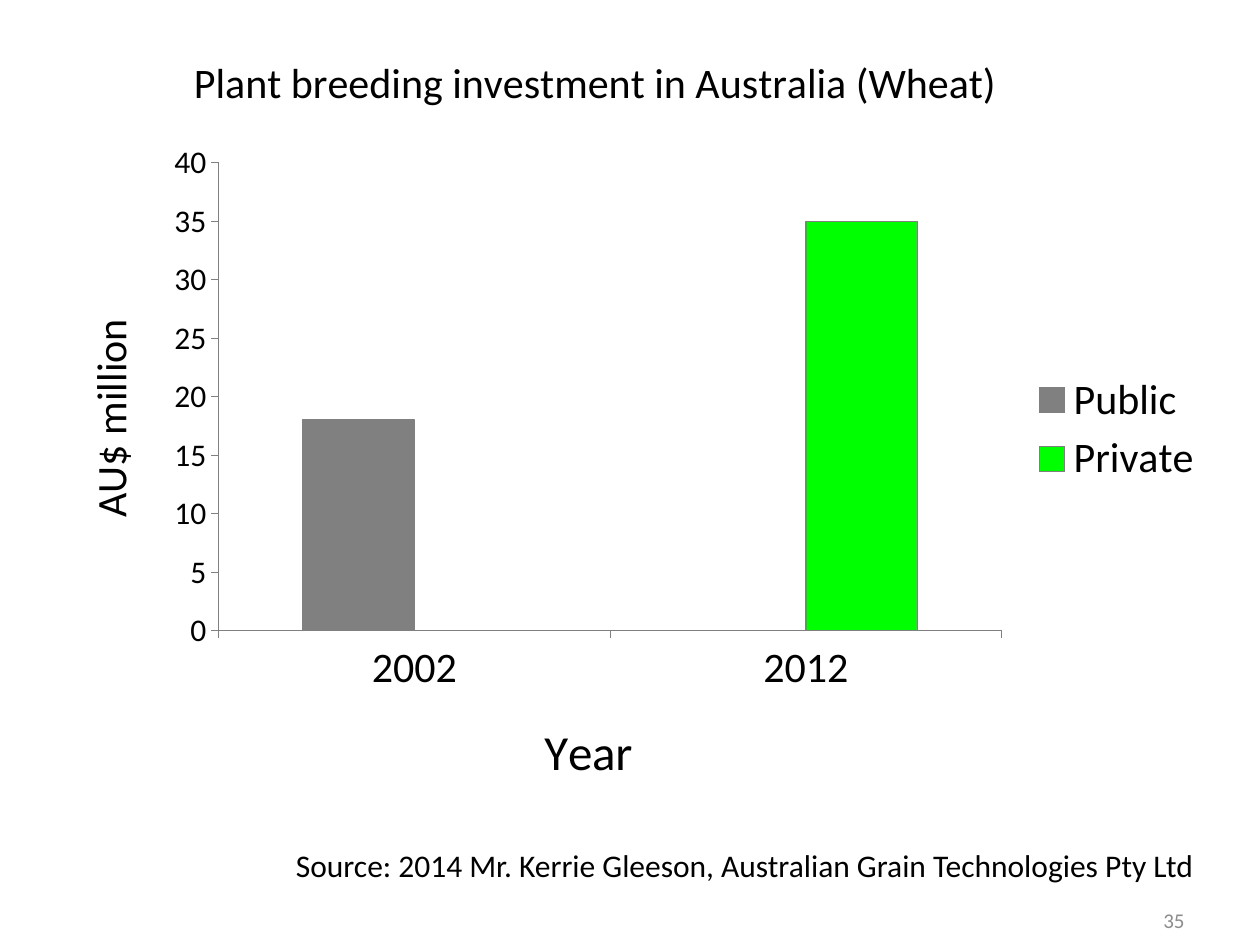
from lxml.etree import SubElement
from pptx import Presentation
from pptx.chart.data import CategoryChartData
from pptx.dml.color import RGBColor
from pptx.enum.chart import XL_CHART_TYPE, XL_LEGEND_POSITION, XL_TICK_MARK
from pptx.enum.text import MSO_ANCHOR, PP_ALIGN
from pptx.oxml.ns import qn
from pptx.util import Pt

FONT = "Calibri"
BLACK = RGBColor(0x00, 0x00, 0x00)
GRAY = RGBColor(0x80, 0x80, 0x80)
LIGHT_GRAY = RGBColor(0x8C, 0x8C, 0x8C)
GREEN = RGBColor(0x00, 0xFF, 0x00)


def format_font(font, size, color=BLACK):
    font.name = FONT
    font.size = Pt(size)
    font.bold = False
    font.color.rgb = color


def add_text(slide, text, box, size, color=BLACK, align=PP_ALIGN.LEFT,
             anchor=MSO_ANCHOR.TOP, wrap=True):
    frame = slide.shapes.add_textbox(*map(Pt, box)).text_frame
    frame.word_wrap = wrap
    frame.vertical_anchor = anchor
    paragraph = frame.paragraphs[0]
    paragraph.alignment = align
    run = paragraph.add_run()
    run.text = text
    format_font(run.font, size, color)


def place(element, chart_size, box, inner=False):
    """Give a chart part a manual layout; box is in points within the chart."""
    for old in element.findall(qn("c:layout")):
        element.remove(old)
    leading = (qn("c:tx"), qn("c:legendPos"))
    position = sum(child.tag in leading for child in element)
    layout = SubElement(element, qn("c:layout"))
    element.insert(position, layout)
    manual = SubElement(layout, qn("c:manualLayout"))
    settings = [("layoutTarget", "inner")] if inner else []
    settings += [("xMode", "edge"), ("yMode", "edge")]
    settings += [(name, length / whole)
                 for name, length, whole in zip("xywh", box, chart_size * 2)]
    for name, value in settings:
        SubElement(manual, qn(f"c:{name}")).set("val", str(value))


def set_title(owner, title, text, size, chart_size, corner):
    """Title a chart or an axis, with its top left at corner."""
    owner.has_title = True
    title.text_frame.text = text
    format_font(title.text_frame.paragraphs[0].runs[0].font, size)
    place(title._element, chart_size, corner)


def format_axis(axis, size):
    axis.has_major_gridlines = False
    axis.major_tick_mark = XL_TICK_MARK.OUTSIDE
    axis.minor_tick_mark = XL_TICK_MARK.NONE
    axis.format.line.color.rgb = GRAY
    axis.format.line.width = Pt(0.75)
    format_font(axis.tick_labels.font, size)


def add_investment_chart(slide, box):
    data = CategoryChartData()
    data.categories = ["2002", "2012"]
    data.add_series("Public", [18, 0])
    data.add_series("Private", [0, 35])
    chart = slide.shapes.add_chart(
        XL_CHART_TYPE.COLUMN_CLUSTERED, *map(Pt, box), data).chart
    format_font(chart.font, 10)

    size = box[2:]
    years, amounts = chart.category_axis, chart.value_axis
    set_title(chart, chart.chart_title,
              "Plant breeding investment in Australia (Wheat)", 24, size, (76.5, 2.5))
    set_title(years, years.axis_title, "Year", 28, size, (276, 381.5))
    set_title(amounts, amounts.axis_title, "AU$ million", 24, size, (12.5, 154))
    format_axis(years, 24)
    format_axis(amounts, 18)
    amounts.minimum_scale, amounts.maximum_scale = 0, 40
    amounts.major_unit = 5

    plot = chart.plots[0]
    plot.gap_width = 150
    plot.overlap = 0
    plot.vary_by_categories = False
    for series, color in zip(plot.series, (GRAY, GREEN)):
        series.format.fill.solid()
        series.format.fill.fore_color.rgb = color
        series.format.line.color.rgb = GRAY
        series.format.line.width = Pt(0.75)
    place(chart._chartSpace.chart.plotArea, size, (95, 69, 447.5, 267.5), inner=True)

    chart.has_legend = True
    legend = chart.legend
    legend.position = XL_LEGEND_POSITION.RIGHT
    legend.include_in_layout = False
    format_font(legend.font, 24)
    place(legend._element, size, (558, 186, 100, 71))


def main():
    presentation = Presentation()
    presentation.slide_width, presentation.slide_height = Pt(720), Pt(540)
    slide = presentation.slides.add_slide(presentation.slide_layouts[6])
    add_text(slide, "35", (516, 511, 168, 29), 12, color=LIGHT_GRAY,
             align=PP_ALIGN.RIGHT, anchor=MSO_ANCHOR.MIDDLE)
    add_investment_chart(slide, (30, 24, 666, 444))
    add_text(slide, "Source: 2014 Mr. Kerrie Gleeson, Australian Grain Technologies Pty Ltd",
             (162, 480, 541, 29), 18, wrap=False)
    presentation.save("out.pptx")


if __name__ == "__main__":
    main()
